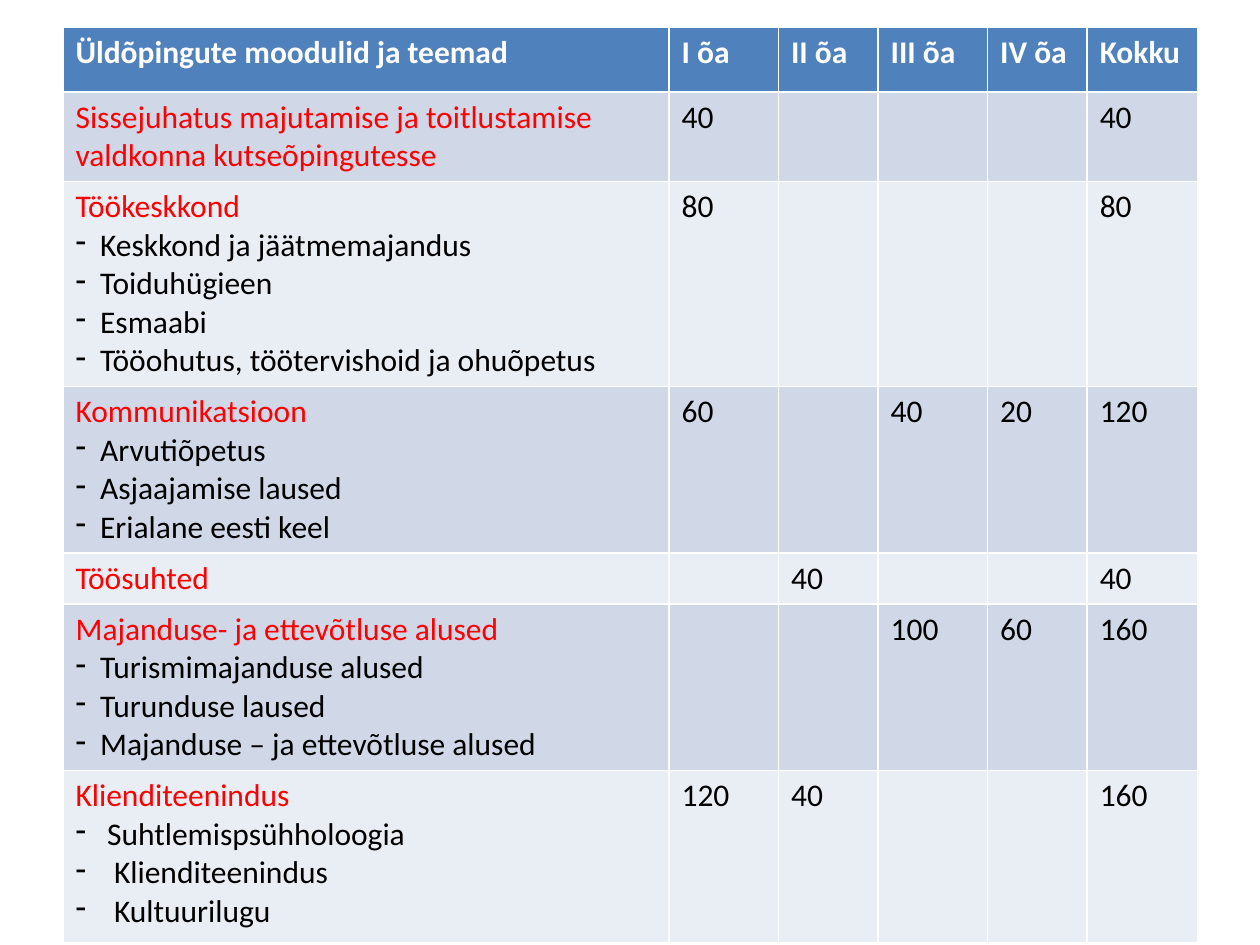
from lxml.etree import SubElement
from pptx import Presentation
from pptx.dml.color import RGBColor
from pptx.oxml.ns import qn
from pptx.util import Pt

COLORS = {
    "header": "4F81BD",
    "odd": "D0D8E8",
    "even": "E9EDF4",
    "header_text": "FFFFFF",
    "module": "FF0000",
    "text": "000000",
}
FONT, FONT_SIZE = "Calibri", 18
LEFT, TOP = 36, 15.4
COLUMN_WIDTHS = [346.3, 62.6, 56.9, 62.6, 56.9, 63.2]
ROW_HEIGHTS = [37.2, 47.5, 110.9, 83.5, 26.6, 88.6, 98.6]

HEADERS = ["Üldõpingute moodulid ja teemad", "I õa", "II õa", "III õa", "IV õa", "Kokku"]
MODULES = [
    ("Sissejuhatus majutamise ja toitlustamise valdkonna kutseõpingutesse", [],
     ["40", "", "", "", "40"]),
    ("Töökeskkond",
     [("Keskkond ja jäätmemajandus", 14), ("Toiduhügieen", 14), ("Esmaabi", 14),
      ("Tööohutus, töötervishoid ja ohuõpetus", 14)],
     ["80", "", "", "", "80"]),
    ("Kommunikatsioon",
     [("Arvutiõpetus", 14), ("Asjaajamise laused", 14), ("Erialane eesti keel", 14)],
     ["60", "", "40", "20", "120"]),
    ("Töösuhted", [], ["", "40", "", "", "40"]),
    ("Majanduse- ja ettevõtluse alused",
     [("Turismimajanduse alused", 14), ("Turunduse laused", 14),
      ("Majanduse – ja ettevõtluse alused", 14)],
     ["", "", "100", "60", "160"]),
    ("Klienditeenindus",
     [("Suhtlemispsühholoogia", 18), ("Klienditeenindus", 22), ("Kultuurilugu", 22)],
     ["120", "40", "", "", "160"]),
]


def rgb(name):
    return RGBColor.from_string(COLORS[name])


def format_paragraph(paragraph, color, bold=False):
    paragraph.font.size = Pt(FONT_SIZE)
    for run in paragraph.runs:
        run.font.name = FONT
        run.font.size = Pt(FONT_SIZE)
        run.font.bold = bold
        run.font.color.rgb = rgb(color)


def fill_cell(cell, text, fill, color="text", bold=False):
    cell.fill.solid()
    cell.fill.fore_color.rgb = rgb(fill)
    cell.text_frame.text = text
    format_paragraph(cell.text_frame.paragraphs[0], color, bold)


def add_topic(cell, text, indent):
    paragraph = cell.text_frame.add_paragraph()
    paragraph.text = text
    format_paragraph(paragraph, "text")
    properties = paragraph._p.get_or_add_pPr()
    properties.set("marL", str(Pt(indent)))
    properties.set("indent", str(-Pt(indent)))
    SubElement(properties, qn("a:buChar")).set("char", "-")


def main():
    """Build the slide with the table of general study modules."""
    presentation = Presentation()
    presentation.slide_width, presentation.slide_height = Pt(720), Pt(540)
    slide = presentation.slides.add_slide(presentation.slide_layouts[6])
    table = slide.shapes.add_table(
        len(ROW_HEIGHTS), len(COLUMN_WIDTHS), Pt(LEFT), Pt(TOP),
        Pt(sum(COLUMN_WIDTHS)), Pt(sum(ROW_HEIGHTS))).table
    for column, width in zip(table.columns, COLUMN_WIDTHS):
        column.width = Pt(width)
    for row, height in zip(table.rows, ROW_HEIGHTS):
        row.height = Pt(height)

    for index, header in enumerate(HEADERS):
        fill_cell(table.cell(0, index), header, "header", "header_text", True)
    for row, (module, topics, hours) in enumerate(MODULES, start=1):
        fill = "odd" if row % 2 else "even"
        module_cell = table.cell(row, 0)
        fill_cell(module_cell, module, fill, "module")
        for text, indent in topics:
            add_topic(module_cell, text, indent)
        for column, value in enumerate(hours, start=1):
            fill_cell(table.cell(row, column), value, fill)

    presentation.save("out.pptx")


if __name__ == "__main__":
    main()
